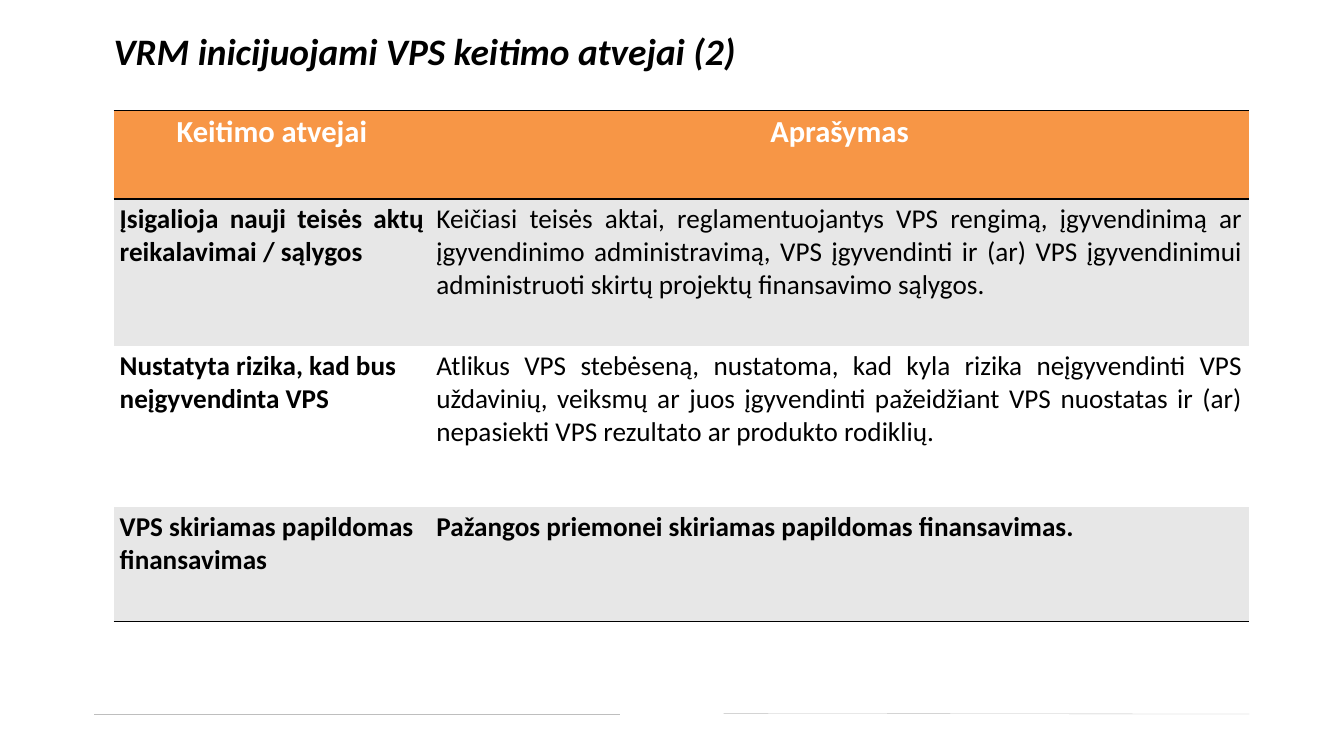
from lxml.etree import SubElement
from pptx import Presentation
from pptx.dml.color import RGBColor
from pptx.enum.text import PP_ALIGN
from pptx.oxml.ns import qn
from pptx.util import Cm, Pt

BLACK = RGBColor(0x00, 0x00, 0x00)
WHITE = RGBColor(0xFF, 0xFF, 0xFF)
ORANGE = RGBColor(0xF7, 0x96, 0x46)
BAND = RGBColor(0xE7, 0xE7, 0xE7)
RULE = RGBColor(0xBE, 0xBE, 0xBE)
PLAIN_TABLE = "{2D5ABB26-0587-4C30-8999-92F81FD0307C}"

COLUMN_WIDTHS = (13.16, 34.01)
ROW_HEIGHTS = (3.68, 6.12, 6.7, 4.75)
HEADINGS = ("Keitimo atvejai", "Aprašymas")
CASES = (
    ("Įsigalioja nauji teisės aktų reikalavimai / sąlygos",
     "Keičiasi teisės aktai, reglamentuojantys VPS rengimą, įgyvendinimą ar "
     "įgyvendinimo administravimą, VPS įgyvendinti ir (ar) VPS įgyvendinimui "
     "administruoti skirtų projektų finansavimo sąlygos."),
    ("Nustatyta rizika, kad bus neįgyvendinta VPS",
     "Atlikus VPS stebėseną, nustatoma, kad kyla rizika neįgyvendinti VPS "
     "uždavinių, veiksmų ar juos įgyvendinti pažeidžiant VPS nuostatas ir (ar) "
     "nepasiekti VPS rezultato ar produkto rodiklių."),
    ("VPS skiriamas papildomas finansavimas",
     "Pažangos priemonei skiriamas papildomas finansavimas."),
)


def write(frame, text, size=32, color=BLACK, bold=False, italic=False,
          align=PP_ALIGN.LEFT):
    """Put one formatted paragraph into a text frame."""
    frame.word_wrap = True
    paragraph = frame.paragraphs[0]
    paragraph.alignment = align
    run = paragraph.add_run()
    run.text = text
    run.font.name = "Calibri"
    run.font.size = Pt(size)
    run.font.bold = bold
    run.font.italic = italic
    run.font.color.rgb = color


def add_border(cell, side):
    """Draw a black border on one side of a cell, given as lnT or lnB."""
    border = SubElement(cell._tc.get_or_add_tcPr(), qn(f"a:{side}"), w=str(Pt(2)))
    fill = SubElement(border, qn("a:solidFill"))
    SubElement(fill, qn("a:srgbClr"), val=str(BLACK))


def fill_cell(cell, text, background, borders=(), **text_format):
    """Set the borders, background and text of a table cell."""
    for side in borders:
        add_border(cell, side)
    cell.fill.solid()
    cell.fill.fore_color.rgb = background
    write(cell.text_frame, text, **text_format)


def add_title(slide, left, top, width, height):
    """Add the slide title."""
    frame = slide.shapes.add_textbox(
        Cm(left), Cm(top), Cm(width), Cm(height)).text_frame
    frame.margin_left = frame.margin_right = 0
    frame.margin_top = frame.margin_bottom = 0
    write(frame, "VRM inicijuojami VPS keitimo atvejai (2)",
          size=44, bold=True, italic=True)


def add_cases(slide, left, top):
    """Add the table of cases and their descriptions."""
    table = slide.shapes.add_table(
        len(ROW_HEIGHTS), len(COLUMN_WIDTHS), Cm(left), Cm(top),
        Cm(sum(COLUMN_WIDTHS)), Cm(sum(ROW_HEIGHTS))).table
    table.first_row = table.horz_banding = False
    table._tbl.tblPr.find(qn("a:tableStyleId")).text = PLAIN_TABLE
    for column, width in zip(table.columns, COLUMN_WIDTHS):
        column.width = Cm(width)
    for row, height in zip(table.rows, ROW_HEIGHTS):
        row.height = Cm(height)

    for column, heading in enumerate(HEADINGS):
        fill_cell(table.cell(0, column), heading, ORANGE, ("lnT", "lnB"),
                  size=36, color=WHITE, bold=True, align=PP_ALIGN.CENTER)
    for row, (case, description) in enumerate(CASES, start=1):
        background = BAND if row % 2 else WHITE
        last = row == len(CASES)
        borders = ("lnB",) if last else ()
        fill_cell(table.cell(row, 0), case, background, borders, bold=True,
                  align=PP_ALIGN.JUSTIFY if row == 1 else PP_ALIGN.LEFT)
        fill_cell(table.cell(row, 1), description, background, borders,
                  bold=last, align=PP_ALIGN.JUSTIFY)


def add_footer_rule(slide, left, top, width, drop=0):
    """Add a thin grey line at the foot of the slide."""
    rule = slide.shapes.add_connector(
        1, Cm(left), Cm(top), Cm(left + width), Cm(top + drop))
    rule.line.color.rgb = RULE
    rule.line.width = Pt(0.4)
    SubElement(rule._element.spPr, qn("a:effectLst"))


def main():
    """Build and save the slide."""
    deck = Presentation()
    deck.slide_width, deck.slide_height = Pt(1583), Pt(891)
    slide = deck.slides.add_slide(deck.slide_layouts[6])
    add_footer_rule(slide, 3.91, 29.71, 21.84)
    add_footer_rule(slide, 30.07, 29.66, 21.84, drop=0.03)
    add_title(slide, 4.72, 1.19, 44.48, 1.88)
    add_cases(slide, 4.72, 4.6)
    deck.save("out.pptx")


if __name__ == "__main__":
    main()
